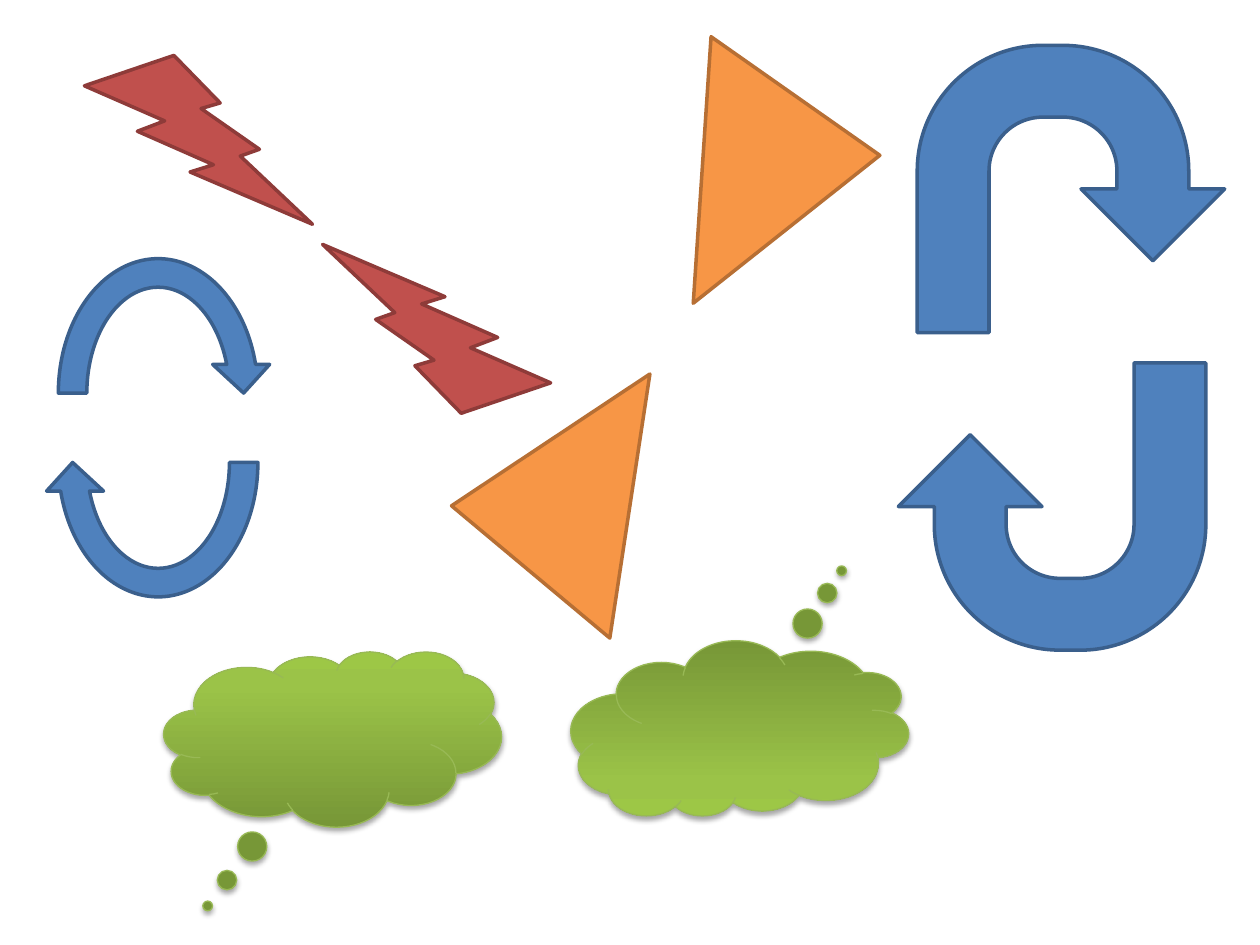
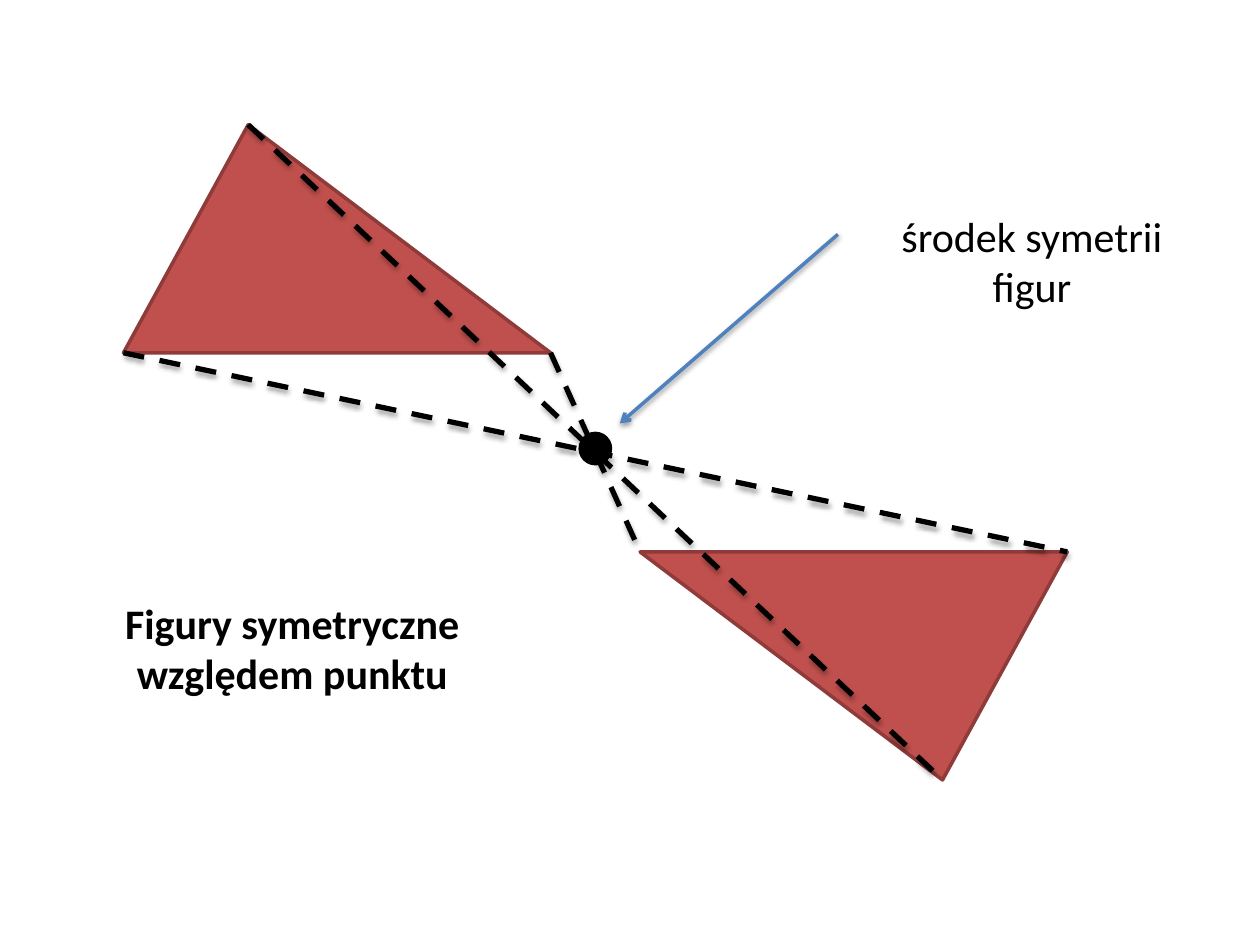
from dataclasses import dataclass
from typing import NamedTuple

from lxml.etree import SubElement
from pptx import Presentation
from pptx.dml.color import RGBColor
from pptx.enum.dml import MSO_LINE
from pptx.enum.shapes import MSO_CONNECTOR, MSO_SHAPE
from pptx.enum.text import MSO_AUTO_SIZE, PP_ALIGN
from pptx.oxml.ns import qn
from pptx.util import Inches, Pt


@dataclass(frozen=True)
class Theme:
    red: tuple = ("C0504D", "8E3B39")  # fill, outline
    blue: tuple = ("4F81BD", "3A5F8C")
    orange: tuple = ("F79646", "B76F34")
    black: tuple = ("000000", "000000")
    cloud_edge: str = "98B955"
    cloud_stops: tuple = ((0, "779737"), (80, "9BC348"), (100, "9DC746"))
    font: str = "Calibri"
    text_pt: int = 24
    outline_pt: float = 2
    dash_pt: float = 3
    cloud_pt: float = 0.75


class Box(NamedTuple):
    x: float
    y: float
    w: float
    h: float

    def offset(self, dx, dy, w, h):
        return Box(self.x + dx, self.y + dy, w, h)


T = Theme()
COLS, ROWS = 100, 75  # slide grid
CELL = Inches(10) / COLS


def cells(*values):
    return [round(v * CELL) for v in values]


def rgb(value):
    return RGBColor.from_string(value)


def add_shadow(sp, alpha=35, dist=1.8):
    spPr = sp._element.spPr
    effects = spPr.find(qn("a:effectLst"))
    if effects is None:
        effects = SubElement(spPr, qn("a:effectLst"))
    shadow = SubElement(effects, qn("a:outerShdw"), blurRad=str(Pt(3.1)),
                        dist=str(Pt(dist)), dir="5400000", rotWithShape="0")
    color = SubElement(shadow, qn("a:srgbClr"), val="000000")
    SubElement(color, qn("a:alpha"), val=str(alpha * 1000))


def add_figure(s, kind, box, colors, rotation=0, adj=()):
    sp = s.shapes.add_shape(kind, *cells(*box))
    sp.rotation = rotation
    for i, value in enumerate(adj):
        sp.adjustments[i] = value
    fill, outline = colors
    sp.fill.solid()
    sp.fill.fore_color.rgb = rgb(fill)
    sp.line.color.rgb = rgb(outline)
    sp.line.width = Pt(T.outline_pt)
    sp.shadow.inherit = False
    return sp


def add_line(s, start, end, color, width):
    line = s.shapes.add_connector(MSO_CONNECTOR.STRAIGHT, *cells(*start, *end))
    line.line.color.rgb = rgb(color)
    line.line.width = Pt(width)
    return line


def add_label(s, box, text, bold=False):
    tf = s.shapes.add_textbox(*cells(*box)).text_frame
    tf.word_wrap = True
    tf.auto_size = MSO_AUTO_SIZE.SHAPE_TO_FIT_TEXT
    p = tf.paragraphs[0]
    p.text = text
    p.alignment = PP_ALIGN.CENTER
    p.font.name, p.font.size, p.font.bold = T.font, Pt(T.text_pt), bold
    p.font.color.rgb = rgb(T.black[0])


def add_pair(s, kind, box, step, colors, turns=(0, 180), adjs=((), ())):
    """Place a figure in box and its turned partner one step away."""
    boxes = (box, box.offset(*step, box.w, box.h))
    return [add_figure(s, kind, b, colors, turn, adj)
            for b, turn, adj in zip(boxes, turns, adjs)]


def cloud_pair(s, box, step):
    tails = ((-0.37, 0.953), (-0.302, 0.903))
    for sp in add_pair(s, MSO_SHAPE.CLOUD_CALLOUT, box, step,
                       (T.cloud_edge, T.cloud_edge), adjs=tails):
        sp.line.width = Pt(T.cloud_pt)
        sp.fill.gradient()
        sp.fill.gradient_angle = 90
        stops = sp._element.spPr.find(".//" + qn("a:gsLst"))
        for stop in list(stops):
            stops.remove(stop)
        for position, color in T.cloud_stops:
            stop = SubElement(stops, qn("a:gs"), pos=str(position * 1000))
            SubElement(stop, qn("a:srgbClr"), val=color)
        add_shadow(sp)


def figures_slide(s):
    # Bolts and arrows
    add_pair(s, MSO_SHAPE.LIGHTNING_BOLT, Box(6.7, 4.4, 18.1, 13.4), (18.9, 15), T.red)
    add_pair(s, MSO_SHAPE.U_TURN_ARROW, Box(72.8, 3.6, 24.4, 22.8), (-1.5, 25.2), T.blue)
    add_pair(s, MSO_SHAPE.CIRCULAR_ARROW, Box(3.5, 19.4, 18.1, 23.6), (0, 5.5), T.blue)
    # Clouds
    cloud_pair(s, Box(13, 51.7, 26.8, 13.9), (32.3, -0.8))
    # Triangles, not quite half a turn apart
    add_pair(s, MSO_SHAPE.ISOSCELES_TRIANGLE, Box(48.1, 4.2, 18.9, 15.7),
             (-9.5, 29.4), T.orange, (321.6, 146.4), ((0.754,), (0.754,)))


def point_symmetry(s, box, w, h, apex):
    """Draw two triangles in opposite corners of box, and their centre."""
    cx, cy = box.x + box.w / 2, box.y + box.h / 2
    add_pair(s, MSO_SHAPE.ISOSCELES_TRIANGLE, box.offset(0, 0, w, h),
             (box.w - w, box.h - h), T.red, adjs=((apex,), (apex,)))
    # Each corner joined to its image through the centre
    for dx, dy in ((apex * w, 0), (0, h), (w, h)):
        x, y = box.x + dx, box.y + dy
        line = add_line(s, (x, y), (2 * cx - x, 2 * cy - y), T.black[0], T.dash_pt)
        line.line.dash_style = MSO_LINE.DASH
        add_shadow(line)
    # Centre of symmetry
    dot = 2.4
    add_figure(s, MSO_SHAPE.FLOWCHART_CONNECTOR,
               Box(cx - dot / 2, cy - dot / 2 - 0.3, dot, dot), T.black)
    # Arrow pointing at the centre
    arrow = add_line(s, (cx + 19.25, cy - 17.3), (cx + 1.95, cy - 2.3),
                     T.blue[0], T.outline_pt)
    SubElement(arrow.line._get_or_add_ln(), qn("a:tailEnd"), type="arrow")
    add_shadow(arrow, alpha=38, dist=1.6)


def symmetry_slide(s):
    point_symmetry(s, Box(9.8, 9.9, 74.9, 52), 33.9, 18.1, 0.292)
    add_label(s, Box(69.7, 16.2, 24.4, 9.1), "środek symetrii figur")
    add_label(s, Box(5.1, 46.9, 36.2, 9.1), "Figury symetryczne względem punktu", bold=True)


def main():
    prs = Presentation()
    prs.slide_width, prs.slide_height = cells(COLS, ROWS)
    for build in (figures_slide, symmetry_slide):
        build(prs.slides.add_slide(prs.slide_layouts[6]))
    prs.save("out.pptx")


if __name__ == "__main__":
    main()
